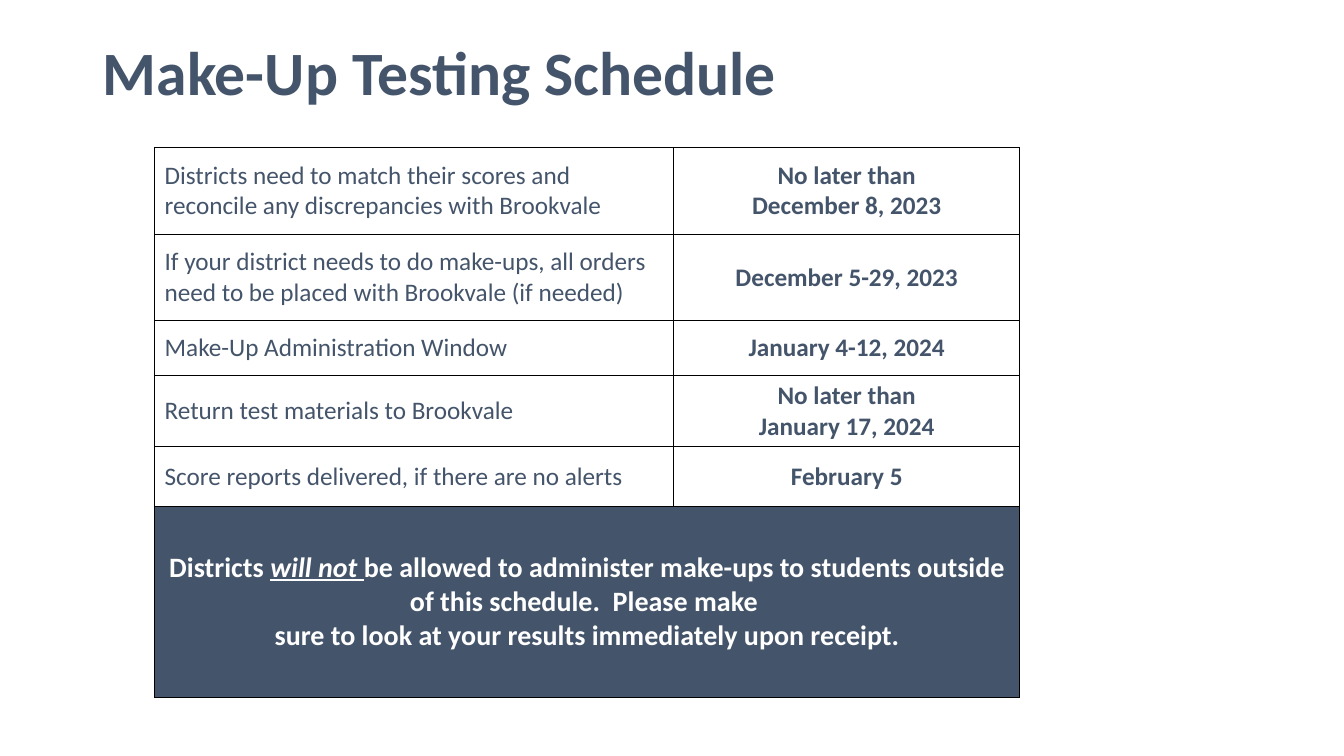
from dataclasses import dataclass

from lxml import etree
from pptx import Presentation
from pptx.dml.color import RGBColor
from pptx.enum.text import MSO_ANCHOR, PP_ALIGN
from pptx.oxml.ns import qn
from pptx.table import _Cell
from pptx.text.text import TextFrame
from pptx.util import Inches, Pt

LEFT = PP_ALIGN.LEFT
CENTER = PP_ALIGN.CENTER
MIDDLE = MSO_ANCHOR.MIDDLE
FONT = "Calibri"
NAVY = "44546A"
WHITE = "FFFFFF"
BLACK = "000000"
SLIDE_WIDTH = Inches(13.33)
SLIDE_HEIGHT = Inches(7.5)
COLUMN_WIDTHS = (5.15, 3.43)
BORDER_TAGS = ("a:lnL", "a:lnR", "a:lnT", "a:lnB")


@dataclass(frozen=True)
class Span:
    text: str
    emphasis: bool = False


@dataclass(frozen=True)
class ScheduleRow:
    task: str
    dates: tuple[str, ...]
    height: float


SCHEDULE = (
    ScheduleRow("Districts need to match their scores and reconcile any discrepancies with Brookvale",
                ("No later than", "December 8, 2023"), 0.86),
    ScheduleRow("If your district needs to do make-ups, all orders need to be placed with Brookvale (if needed)",
                ("December 5-29, 2023",), 0.86),
    ScheduleRow("Make-Up Administration Window", ("January 4-12, 2024",), 0.54),
    ScheduleRow("Return test materials to Brookvale", ("No later than", "January 17, 2024"), 0.71),
    ScheduleRow("Score reports delivered, if there are no alerts", ("February 5",), 0.59),
)
NOTICE = (
    Span("Districts "),
    Span("will not ", emphasis=True),
    Span("be allowed to administer make-ups to students outside of this schedule.  Please make "),
    Span("\n"),
    Span("sure to look at your results immediately upon receipt."),
)
NOTICE_HEIGHT = 1.9


def color(value: str) -> RGBColor:
    return RGBColor.from_string(value)


def write(frame: TextFrame, *paragraphs: tuple[Span, ...], size: int = 18, ink: str = NAVY,
          bold: bool = False, align: PP_ALIGN = LEFT, line_spacing: float = 1.0) -> None:
    frame.word_wrap = True
    for index, spans in enumerate(paragraphs):
        paragraph = frame.add_paragraph() if index else frame.paragraphs[0]
        paragraph.alignment = align
        paragraph.line_spacing = line_spacing
        for span in spans:
            if span.text == "\n":
                paragraph.add_line_break()
                continue
            run = paragraph.add_run()
            run.text = span.text
            font = run.font
            font.name, font.size, font.bold = FONT, Pt(size), bold
            font.italic = font.underline = span.emphasis
            font.color.rgb = color(ink)


def style_cell(cell: _Cell, background: str) -> None:
    properties = cell._tc.get_or_add_tcPr()
    for tag in BORDER_TAGS:
        line = etree.SubElement(properties, qn(tag), w=str(Pt(1)))
        fill = etree.SubElement(line, qn("a:solidFill"))
        etree.SubElement(fill, qn("a:srgbClr"), val=BLACK)
    cell.fill.solid()
    cell.fill.fore_color.rgb = color(background)
    cell.vertical_anchor = MIDDLE


def main() -> None:
    presentation = Presentation()
    presentation.slide_width = SLIDE_WIDTH
    presentation.slide_height = SLIDE_HEIGHT
    slide = presentation.slides.add_slide(presentation.slide_layouts[5])

    title = slide.shapes.title
    title.left, title.top = int(SLIDE_WIDTH * 0.069), int(SLIDE_HEIGHT * 0.035)
    title.width, title.height = int(SLIDE_WIDTH * 0.863), int(SLIDE_HEIGHT * 0.13)
    title.text_frame.vertical_anchor = MIDDLE
    write(title.text_frame, (Span("Make-Up Testing Schedule"),),
          size=44, bold=True, line_spacing=0.9)

    heights = [row.height for row in SCHEDULE] + [NOTICE_HEIGHT]
    table = slide.shapes.add_table(
        len(heights), len(COLUMN_WIDTHS), int(SLIDE_WIDTH * 0.115), int(SLIDE_HEIGHT * 0.195),
        Inches(sum(COLUMN_WIDTHS)), Inches(sum(heights))).table
    table.first_row = table.horz_banding = False
    for column, width in zip(table.columns, COLUMN_WIDTHS):
        column.width = Inches(width)
    for table_row, height in zip(table.rows, heights):
        table_row.height = Inches(height)

    notice_row = len(SCHEDULE)
    for row_index in range(len(heights)):
        for column_index in range(len(COLUMN_WIDTHS)):
            style_cell(table.cell(row_index, column_index), NAVY if row_index == notice_row else WHITE)
    for row_index, row in enumerate(SCHEDULE):
        write(table.cell(row_index, 0).text_frame, (Span(row.task),))
        write(table.cell(row_index, 1).text_frame, *((Span(line),) for line in row.dates),
              bold=True, align=CENTER)

    notice = table.cell(notice_row, 0)
    notice.merge(table.cell(notice_row, 1))
    write(notice.text_frame, NOTICE, size=20, ink=WHITE, bold=True, align=CENTER)
    presentation.save("out.pptx")


if __name__ == "__main__":
    main()
